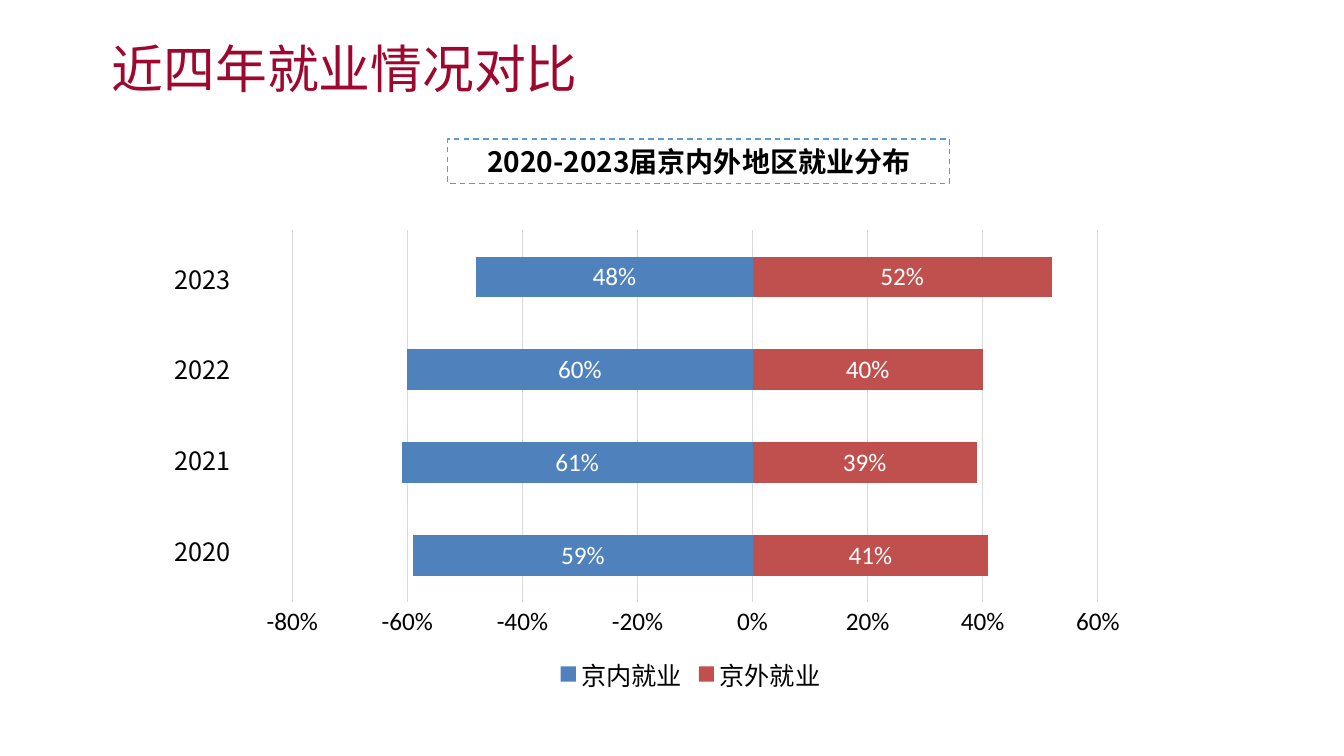
from dataclasses import dataclass

from lxml.etree import SubElement
from pptx import Presentation
from pptx.chart.data import CategoryChartData
from pptx.dml.color import RGBColor
from pptx.enum.chart import (XL_CHART_TYPE, XL_LABEL_POSITION,
                             XL_LEGEND_POSITION, XL_TICK_MARK)
from pptx.enum.dml import MSO_LINE
from pptx.enum.shapes import MSO_SHAPE
from pptx.enum.text import MSO_ANCHOR, PP_ALIGN
from pptx.oxml import parse_xml
from pptx.oxml.ns import nsdecls, qn
from pptx.util import Inches, Pt


@dataclass(frozen=True)
class Theme:
    title: str = "9E072E"
    ink: str = "000000"
    paper: str = "FFFFFF"
    dash: str = "5B9BD5"
    grid: str = "D9D9D9"
    inner: str = "4F81BD"
    outer: str = "C0504D"
    face: str = "Noto Sans CJK SC"
    digit: str = "Calibri"
    head: int = 37
    sub: int = 20
    body: int = 18


THEME = Theme()
YEARS = ["2023", "2022", "2021", "2020"]
SERIES = [
    ("京内就业", [-0.59, -0.61, -0.6, -0.48], THEME.inner),
    ("京外就业", [0.41, 0.39, 0.4, 0.52], THEME.outer),
]


def color(code):
    return RGBColor.from_string(code)


def style(font, name, size, code, bold=False):
    font.name = name
    font.size = Pt(size)
    font.bold = bold
    font.color.rgb = color(code)


def write(shape, text, size, code, bold=False, align=PP_ALIGN.LEFT):
    frame = shape.text_frame
    frame.word_wrap = True
    para = frame.paragraphs[0]
    para.text = text
    para.alignment = align
    style(para.font, THEME.face, size, code, bold)
    props = para._p.pPr.find(qn("a:defRPr"))
    SubElement(props, qn("a:ea"), typeface=THEME.face)
    return frame


def add_title(slide, left, top, width, height):
    box = slide.shapes.add_textbox(*map(Inches, (left, top, width, height)))
    frame = write(box, "近四年就业情况对比", THEME.head, THEME.title)
    frame.vertical_anchor = MSO_ANCHOR.MIDDLE
    frame.margin_left = frame.margin_right = Inches(0.13)
    frame.margin_top = frame.margin_bottom = Inches(0.07)
    frame.paragraphs[0].line_spacing = 0.9


def add_banner(slide, left, top, width, height):
    box = slide.shapes.add_shape(
        MSO_SHAPE.RECTANGLE, *map(Inches, (left, top, width, height)))
    box.shadow.inherit = False
    box.fill.solid()
    box.fill.fore_color.rgb = color(THEME.paper)
    box.line.color.rgb = color(THEME.dash)
    box.line.width = Pt(1)
    box.line.dash_style = MSO_LINE.DASH
    write(box, "2020-2023届京内外地区就业分布", THEME.sub, THEME.ink,
          True, PP_ALIGN.CENTER)


def add_years(slide, left, top, width, height):
    step = height / len(YEARS)
    for row, year in enumerate(YEARS):
        box = slide.shapes.add_textbox(
            *map(Inches, (left, top + row * step, width, 0.4)))
        write(box, year, THEME.body, THEME.ink)


def set_plot(chart, left, top, width, height):
    area = chart.element.find(".//" + qn("c:plotArea"))
    for old in area.findall(qn("c:layout")):
        area.remove(old)
    area.insert(0, parse_xml(
        f'<c:layout {nsdecls("c")}><c:manualLayout>'
        '<c:layoutTarget val="inner"/>'
        '<c:xMode val="edge"/><c:yMode val="edge"/>'
        f'<c:x val="{left}"/><c:y val="{top}"/>'
        f'<c:w val="{width}"/><c:h val="{height}"/>'
        '</c:manualLayout></c:layout>'))


def set_axes(chart):
    chart.category_axis.visible = False
    axis = chart.value_axis
    axis.minimum_scale = -0.8
    axis.maximum_scale = 0.6
    axis.major_unit = 0.2
    axis.major_tick_mark = axis.minor_tick_mark = XL_TICK_MARK.NONE
    axis.format.line.fill.background()
    axis.major_gridlines.format.line.color.rgb = color(THEME.grid)
    axis.major_gridlines.format.line.width = Pt(0.75)
    axis.tick_labels.number_format = "0%"
    axis.tick_labels.number_format_is_linked = False
    style(axis.tick_labels.font, THEME.digit, THEME.body, THEME.ink)


def set_bars(plot):
    plot.gap_width = 130
    plot.overlap = 100
    plot.vary_by_categories = False
    for bars, (_, _, code) in zip(plot.series, SERIES):
        bars.invert_if_negative = False
        bars.format.fill.solid()
        bars.format.fill.fore_color.rgb = color(code)
        labels = bars.data_labels
        labels.show_value = True
        labels.position = XL_LABEL_POSITION.CENTER
        labels.number_format = "0%;0%"
        labels.number_format_is_linked = False
        style(labels.font, THEME.digit, THEME.body, THEME.paper)


def add_bars(slide, left, top, width, height):
    data = CategoryChartData(number_format="0%")
    data.categories = ["1", "2", "3", "4"]
    for name, values, _ in SERIES:
        data.add_series(name, values)
    chart = slide.shapes.add_chart(
        XL_CHART_TYPE.BAR_STACKED,
        *map(Inches, (left, top, width, height)), data).chart
    style(chart.font, THEME.digit, THEME.body, THEME.ink)
    chart.has_title = False
    chart.has_legend = True
    chart.legend.position = XL_LEGEND_POSITION.BOTTOM
    chart.legend.include_in_layout = False
    style(chart.legend.font, THEME.digit, THEME.body, THEME.ink)
    set_axes(chart)
    set_bars(chart.plots[0])
    set_plot(chart, 0.05, 0.02, 0.91, 0.78)


def main():
    deck = Presentation()
    deck.slide_width = Inches(13.33)
    deck.slide_height = Inches(7.5)
    slide = deck.slides.add_slide(deck.slide_layouts[6])
    add_title(slide, 0.98, 0.38, 11.39, 0.67)
    add_banner(slide, 4.44, 1.38, 4.98, 0.44)
    add_years(slide, 1.63, 2.57, 0.95, 3.6)
    add_bars(slide, 2.46, 2.19, 8.78, 4.73)
    deck.save("out.pptx")


if __name__ == "__main__":
    main()
